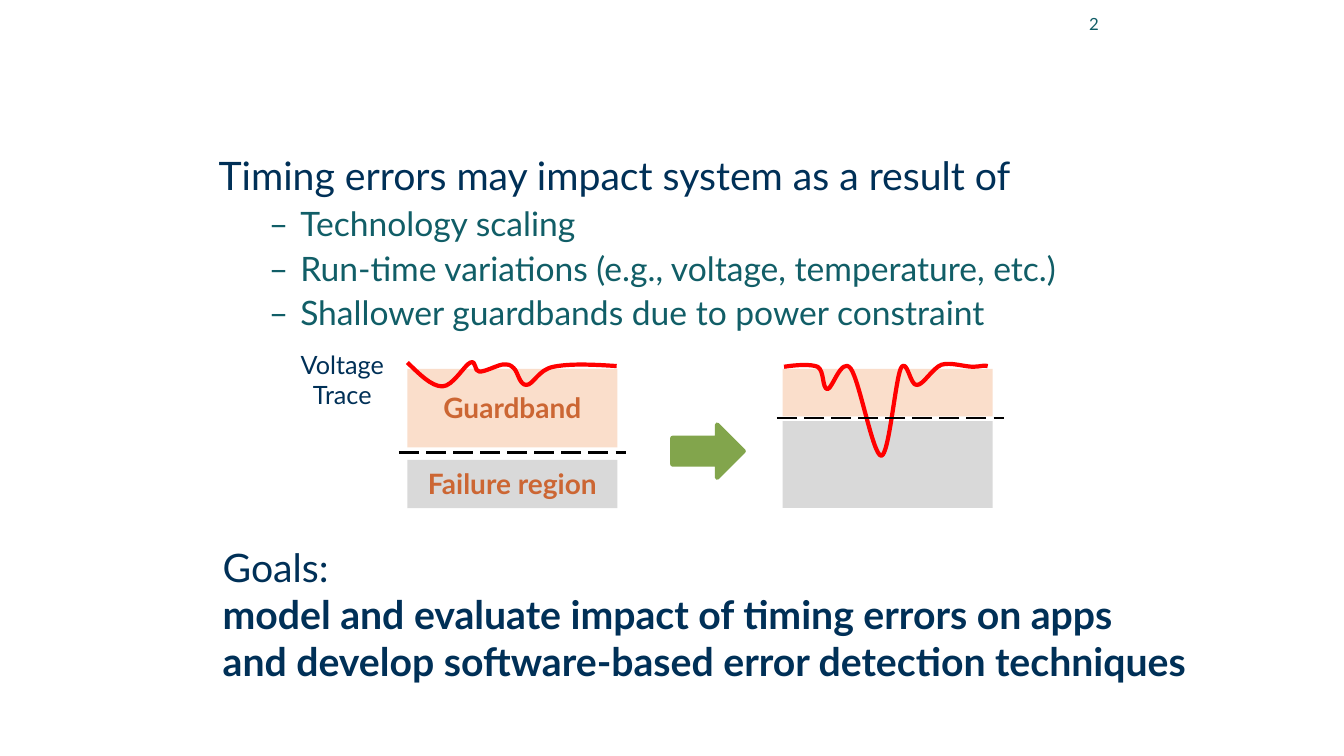
from lxml.etree import SubElement
from pptx import Presentation
from pptx.dml.color import RGBColor
from pptx.enum.dml import MSO_LINE
from pptx.enum.shapes import MSO_CONNECTOR, MSO_SHAPE
from pptx.enum.text import MSO_ANCHOR, PP_ALIGN as Align
from pptx.oxml.ns import qn
from pptx.util import Pt

FONT = "Lato"
NAVY, TEAL, ORANGE = "003057", "115E67", "CC6633"
PEACH, GREY, GREEN, RED, BLACK = "FADECB", "D9D9D9", "82A54C", "FF0000", "000000"

# Voltage traces: a start point, then three Bézier points per segment
STEADY_TRACE = [
    (291, 259),
    (299.5, 267), (308, 276), (316, 276),
    (323.5, 276), (332, 260.5), (336, 259),
    (340.5, 257), (338.5, 265.5), (342.5, 265.5),
    (346.5, 265.5), (354, 261.5), (358.5, 260.5),
    (363, 260), (364.5, 260.5), (367, 263),
    (370, 265.5), (371, 275), (376, 275),
    (381, 275), (384.5, 264), (395.5, 262),
    (406, 260), (418.5, 260), (440.5, 261.5),
]
FAILING_TRACE = [
    (560, 262),
    (569.5, 260.5), (579, 260), (584, 262),
    (589, 265), (587, 277), (591, 278),
    (594.5, 278), (601, 255), (607.5, 263),
    (614, 271.5), (623.5, 325.5), (629.5, 325.5),
    (635, 325.5), (639.5, 271.5), (643.5, 263),
    (648, 255), (650, 276), (655, 275),
    (659.5, 275), (666, 263), (672.5, 260.5),
    (679, 258.5), (689, 262), (695, 262),
    (700, 262), (703.5, 260.5), (705.5, 261.5),
]


def rgb(value):
    return RGBColor.from_string(value)


def style_runs(paragraph, size, color, bold=False):
    for run in paragraph.runs:
        run.font.name = FONT
        run.font.size = Pt(size)
        run.font.bold = bold
        run.font.color.rgb = rgb(color)


def clear_margins(frame):
    frame.margin_left = frame.margin_right = frame.margin_top = frame.margin_bottom = 0


def add_text(slide, box, text, size, color, align=Align.LEFT, anchor=MSO_ANCHOR.TOP):
    frame = slide.shapes.add_textbox(*map(Pt, box)).text_frame
    frame.word_wrap = True
    frame.vertical_anchor = anchor
    frame.text = text
    for paragraph in frame.paragraphs:
        paragraph.alignment = align
        style_runs(paragraph, size, color)
    return frame


def add_dash_bullet(paragraph):
    props = paragraph._p.get_or_add_pPr()
    props.set("marL", str(Pt(58.25)))
    props.set("indent", str(Pt(-22.5)))
    bullet_color = SubElement(props, qn("a:buClr"))
    SubElement(bullet_color, qn("a:srgbClr")).set("val", TEAL)
    SubElement(props, qn("a:buFont")).set("typeface", FONT)
    SubElement(props, qn("a:buChar")).set("char", "–")


def add_causes(slide, box, heading, causes):
    frame = add_text(slide, box, "\n".join([heading, *causes]), 28, NAVY)
    clear_margins(frame)
    for paragraph in frame.paragraphs:
        paragraph.line_spacing = 0.9
    for cause in frame.paragraphs[1:]:
        cause.space_before = Pt(6)
        add_dash_bullet(cause)
        style_runs(cause, 24, TEAL)


def add_block(slide, preset, box, fill, label=""):
    block = slide.shapes.add_shape(preset, *map(Pt, box))
    block.shadow.inherit = False
    block.fill.solid()
    block.fill.fore_color.rgb = rgb(fill)
    block.line.fill.background()
    if label:
        frame = block.text_frame
        clear_margins(frame)
        frame.vertical_anchor = MSO_ANCHOR.MIDDLE
        frame.text = label
        frame.paragraphs[0].alignment = Align.CENTER
        frame.paragraphs[0].line_spacing = 0.99
        style_runs(frame.paragraphs[0], 20, ORANGE, bold=True)
    return block


def set_line(shape, color, width):
    shape.line.color.rgb = rgb(color)
    shape.line.width = Pt(width)


def add_threshold(slide, left, y, length=162):
    threshold = slide.shapes.add_connector(
        MSO_CONNECTOR.STRAIGHT, Pt(left), Pt(y), Pt(left + length), Pt(y))
    set_line(threshold, BLACK, 1.75)
    threshold.line.dash_style = MSO_LINE.LONG_DASH
    SubElement(threshold._element.spPr, qn("a:effectLst"))


def add_trace(slide, nodes):
    start, *anchors = [(Pt(x), Pt(y)) for x, y in nodes[::3]]
    builder = slide.shapes.build_freeform(*start)
    builder.add_line_segments(anchors, close=False)
    trace = builder.convert_to_shape()
    trace.shadow.inherit = False
    trace.fill.background()
    set_line(trace, RED, 3)

    # Turn each straight segment into a Bézier curve
    outline = next(trace._element.iter(qn("a:path")))
    for segment in outline.findall(qn("a:lnTo")):
        outline.remove(segment)
    for i in range(1, len(nodes), 3):
        curve = SubElement(outline, qn("a:cubicBezTo"))
        for x, y in nodes[i:i + 3]:
            point = SubElement(curve, qn("a:pt"))
            point.set("x", str(Pt(x) - trace.left))
            point.set("y", str(Pt(y) - trace.top))


def main():
    deck = Presentation()
    deck.slide_width, deck.slide_height = Pt(960), Pt(540)
    slide = deck.slides.add_slide(deck.slide_layouts[6])

    # Causes of timing errors and page number
    add_causes(slide, (156.25, 112, 672, 130),
               "Timing errors may impact system as a result of",
               ["Technology scaling",
                "Run-time variations (e.g., voltage, temperature, etc.)",
                "Shallower guardbands due to power constraint"])
    add_text(slide, (704, -1, 88, 36), "2", 12, TEAL, Align.RIGHT, MSO_ANCHOR.MIDDLE)

    # Wide guardband: the trace stays above the failure region
    rect = MSO_SHAPE.RECTANGLE
    add_text(slide, (204, 246, 81, 51), "Voltage\nTrace", 18, NAVY, Align.CENTER)
    add_block(slide, rect, (291, 263.5, 150, 56), PEACH, "Guardband")
    add_block(slide, rect, (291, 328.5, 150, 34.5), GREY, "Failure region")
    add_trace(slide, STEADY_TRACE)
    add_threshold(slide, 285, 323.25)

    # Shallow guardband: the trace dips into the failure region
    add_block(slide, rect, (559, 300.75, 150, 62), GREY)
    add_block(slide, rect, (559, 263.5, 150, 34), PEACH)
    add_trace(slide, FAILING_TRACE)
    add_threshold(slide, 555, 298.75)

    # Arrow from wide to shallow
    arrow = add_block(slide, MSO_SHAPE.RIGHT_ARROW, (480.25, 303.25, 51, 38), GREEN)
    set_line(arrow, GREEN, 3)

    # Goals
    goals = add_text(slide, (152, 384.5, 798, 131),
                     "Goals:\vmodel and evaluate impact of timing errors on apps"
                     "\vand develop software-based error detection techniques", 28, NAVY)
    for run in goals.paragraphs[0].runs[1:]:
        run.font.bold = True

    deck.save("out.pptx")


if __name__ == "__main__":
    main()
